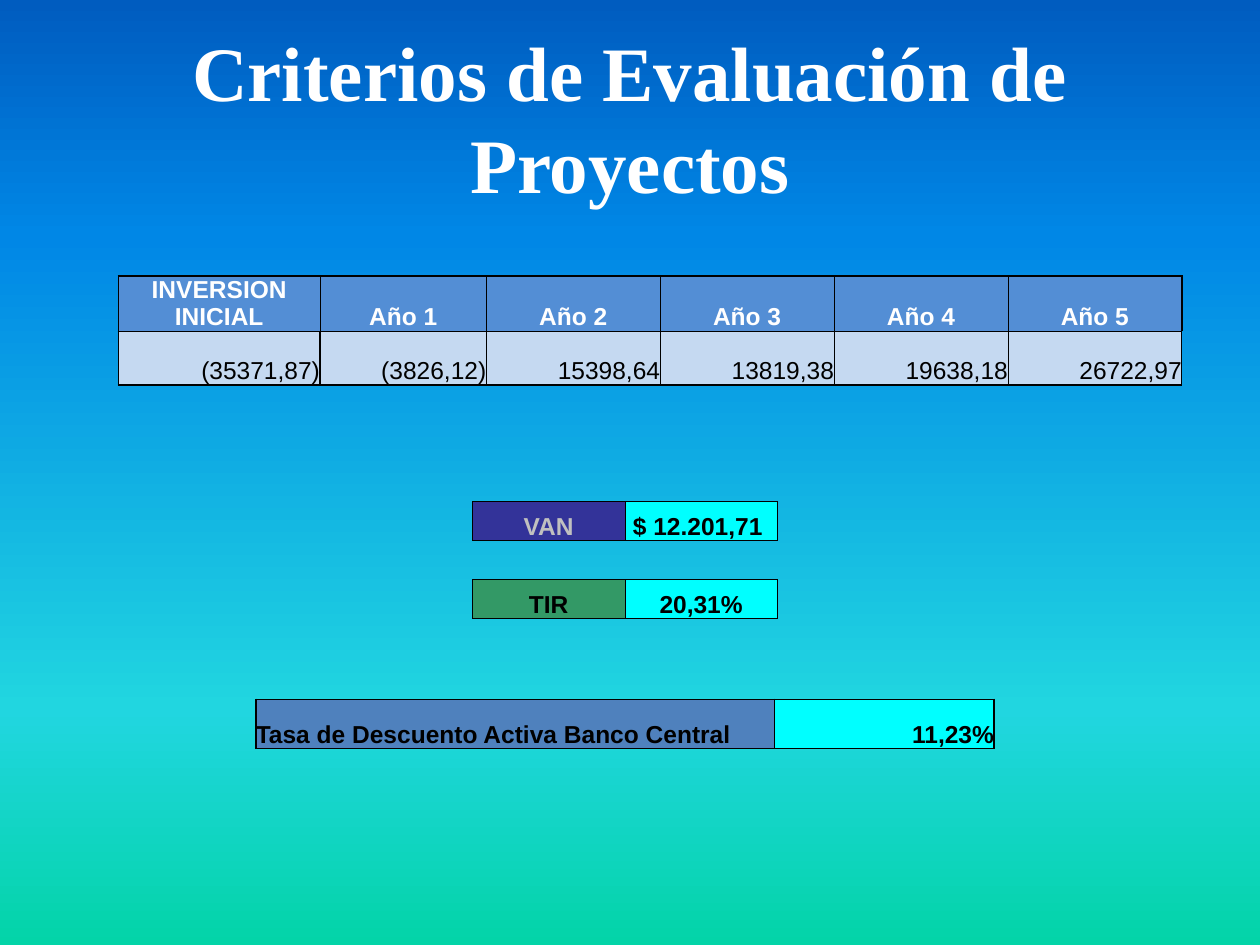
from dataclasses import dataclass

from lxml import etree
from pptx import Presentation
from pptx import util as u
from pptx.dml.color import RGBColor
from pptx.enum import text
from pptx.oxml import ns

LEFT, CENTER, RIGHT = text.PP_ALIGN.LEFT, text.PP_ALIGN.CENTER, text.PP_ALIGN.RIGHT


@dataclass(frozen=True)
class Theme:
    title_font: str = "Times New Roman"
    body_font: str = "Arial"
    title_size: int = 44
    body_size: int = 14
    white: str = "FFFFFF"
    black: str = "000000"
    silver: str = "C0C0C0"
    header: str = "538ED5"
    pale: str = "C5D9F1"
    navy: str = "333399"
    green: str = "339966"
    steel: str = "4F81BD"
    cyan: str = "00FFFF"
    thin: float = 0.5
    thick: float = 1
    backdrop: tuple = ((0, "03D4A8"), (25, "21D6E0"), (75, "0087E6"), (100, "005CBF"))


@dataclass(frozen=True)
class Cell:
    words: str = ""
    fill: str = ""
    color: str = Theme.black
    bold: bool = True
    align: text.PP_ALIGN = CENTER


class SlideBuilder:
    """Places elements on a grid of 100 columns by 75 rows."""

    def __init__(self, deck, theme):
        self.theme = theme
        self.column = deck.slide_width / 100
        self.row = deck.slide_height / 75
        self.slide = deck.slides.add_slide(deck.slide_layouts[5])

    def across(self, columns):
        return u.Emu(round(columns * self.column))

    def down(self, rows):
        return u.Emu(round(rows * self.row))

    def background(self):
        fill = self.slide.background.fill
        fill.gradient()
        fill.gradient_angle = 90
        stops = self.slide.element.find(".//" + ns.qn("a:gsLst"))
        for stop in list(stops):
            stops.remove(stop)
        for share, color in self.theme.backdrop:
            stop = etree.SubElement(stops, ns.qn("a:gs"), pos=str(share * 1000))
            etree.SubElement(stop, ns.qn("a:srgbClr"), val=color)

    def format(self, para, font, size, color, bold, align):
        para.alignment = align
        para.font.name = font
        para.font.size = u.Pt(size)
        para.font.bold = bold
        para.font.color.rgb = RGBColor.from_string(color)

    def title(self, words, left, top, width, height):
        box = self.slide.shapes.title
        box.left, box.top = self.across(left), self.down(top)
        box.width, box.height = self.across(width), self.down(height)
        frame = box.text_frame
        frame.text = words
        frame.word_wrap = True
        frame.auto_size = text.MSO_AUTO_SIZE.NONE
        frame.vertical_anchor = text.MSO_ANCHOR.MIDDLE
        theme = self.theme
        self.format(frame.paragraphs[0], theme.title_font, theme.title_size,
                    theme.white, True, CENTER)

    def border(self, cell, widths):
        """Draw the sides L, R, T and B; a width of 0 hides a side."""
        properties = cell._tc.get_or_add_tcPr()
        for place, side in enumerate("LRTB"):
            line = etree.Element(ns.qn("a:ln" + side), w=str(u.Pt(widths[side])))
            if widths[side]:
                paint = etree.SubElement(line, ns.qn("a:solidFill"))
                etree.SubElement(paint, ns.qn("a:srgbClr"), val=self.theme.black)
            else:
                etree.SubElement(line, ns.qn("a:noFill"))
            properties.insert(place, line)

    def table(self, left, top, columns, rows, cells, outer, special=None):
        """Outer sides take the width outer, inner sides are thin."""
        frame = self.slide.shapes.add_table(
            len(rows), len(columns), self.across(left), self.down(top),
            self.across(sum(columns)), self.down(sum(rows)))
        table = frame.table
        table.first_row = table.horz_banding = False
        for column, width in zip(table.columns, columns):
            column.width = self.across(width)
        for row, height in zip(table.rows, rows):
            row.height = self.down(height)
        last_row, last_column = len(rows) - 1, len(columns) - 1
        for r, line in enumerate(cells):
            for c, content in enumerate(line):
                edges = {"L": c == 0, "R": c == last_column,
                         "T": r == 0, "B": r == last_row}
                widths = {side: outer if edge else self.theme.thin
                          for side, edge in edges.items()}
                widths.update((special or {}).get((r, c), {}))
                self.fill_cell(table.cell(r, c), content, widths)

    def fill_cell(self, cell, content, widths):
        cell.margin_left = cell.margin_right = cell.margin_top = cell.margin_bottom = 0
        cell.vertical_anchor = text.MSO_ANCHOR.BOTTOM
        if content.fill:
            cell.fill.solid()
            cell.fill.fore_color.rgb = RGBColor.from_string(content.fill)
        else:
            cell.fill.background()
        self.border(cell, widths)
        para = cell.text_frame.paragraphs[0]
        if content.words:
            para.add_run().text = content.words
        self.format(para, self.theme.body_font, self.theme.body_size,
                    content.color, content.bold, content.align)


def main():
    theme = Theme()
    deck = Presentation()
    deck.slide_width, deck.slide_height = u.Inches(10), u.Inches(7.5)
    page = SlideBuilder(deck, theme)
    page.background()
    page.title("Criterios de Evaluación de Proyectos", 5, 3, 90, 12.5)

    # Cash flow by year
    headings = ["INVERSION INICIAL"] + [f"Año {year}" for year in range(1, 6)]
    flows = ["(35371,87)", "(3826,12)", "15398,64", "13819,38", "19638,18", "26722,97"]
    page.table(
        9.4, 21.9, [16, 13.2] + [13.8] * 4, [4.1, 4.3],
        [[Cell(words, theme.header, theme.white) for words in headings],
         [Cell(words, theme.pale, bold=False, align=RIGHT) for words in flows]],
        theme.thick,
        {(1, 0): {"R": theme.thick}, (1, 1): {"L": theme.thick},
         (1, 5): {"R": theme.thin}})

    # Net present value and rate of return, with an open row between
    open_sides = {"L": 0, "R": 0}
    page.table(
        37.5, 39.8, [12.1] * 2, [3.1] * 3,
        [[Cell("VAN", theme.navy, theme.silver), Cell("$ 12.201,71 ", theme.cyan)],
         [Cell(), Cell()],
         [Cell("TIR", theme.green), Cell("20,31%", theme.cyan)]],
        theme.thin, {(1, 0): open_sides, (1, 1): open_sides})

    # Discount rate
    page.table(
        20.3, 55.5, [41.2, 17.4], [3.9],
        [[Cell("Tasa de Descuento Activa Banco Central", theme.steel, align=LEFT),
          Cell("11,23%", theme.cyan, align=RIGHT)]],
        theme.thick)

    deck.save("out.pptx")


if __name__ == "__main__":
    main()
